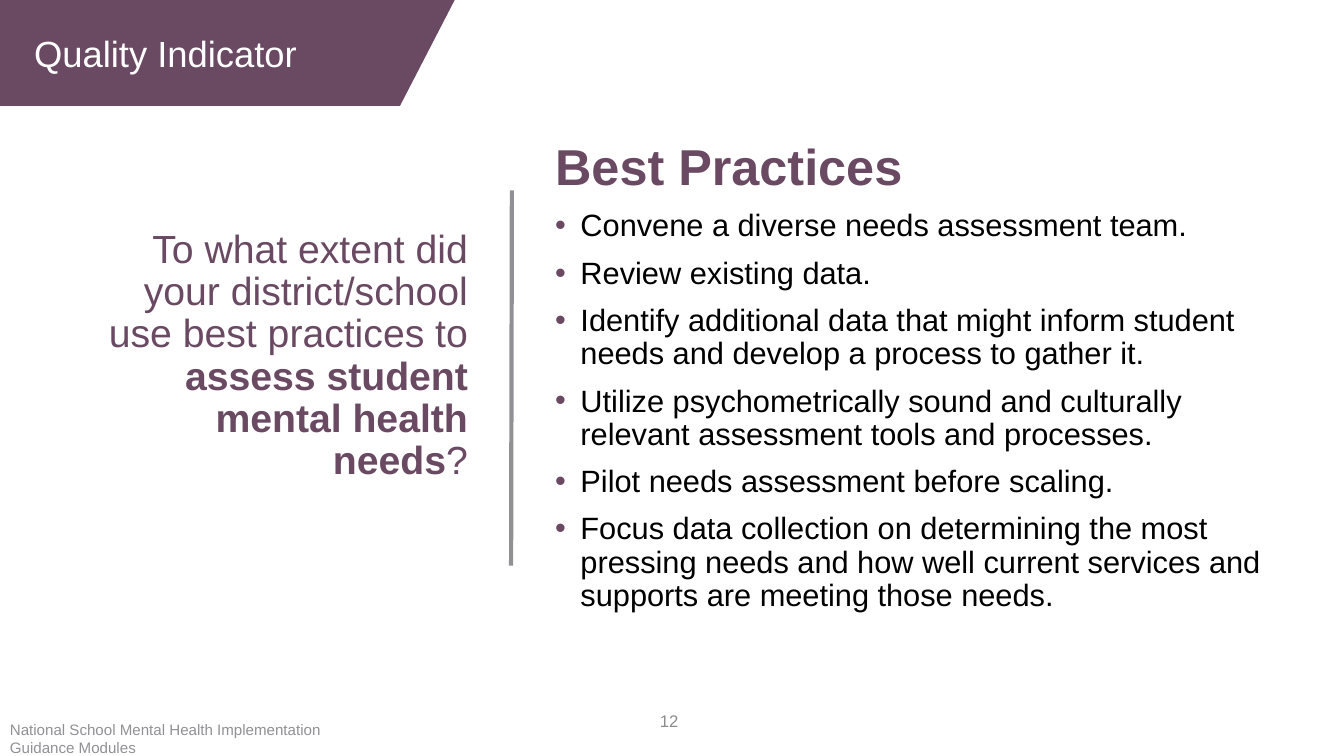
"""Build the Quality Indicator slide on needs assessment."""
from dataclasses import dataclass

from lxml import etree
from pptx import Presentation
from pptx import util as u
from pptx.dml.color import RGBColor
from pptx.enum import shapes, text
from pptx.oxml import ns

PLUM = RGBColor(0x6A, 0x4A, 0x62)
WHITE = RGBColor(0xFF, 0xFF, 0xFF)
BLACK = RGBColor(0x00, 0x00, 0x00)
GREY = RGBColor(0x91, 0x91, 0x95)
PALE = RGBColor(0x8C, 0x8C, 0x8C)
TOP, MID = text.MSO_ANCHOR.TOP, text.MSO_ANCHOR.MIDDLE
LEFT, RIGHT = text.PP_ALIGN.LEFT, text.PP_ALIGN.RIGHT


@dataclass
class Run:
    words: str
    size: float
    color: RGBColor
    bold: bool = False


@dataclass
class Para:
    runs: list[Run]
    align: int = LEFT
    line: float = 1.0
    space: float = 0
    dot: bool = False


@dataclass
class Block:
    box: tuple[float, float, float, float]
    paras: list[Para]
    anchor: int = TOP
    foot: float = 0.13
    fill: RGBColor | None = None


QUERY = Para([
    Run("To what extent did your district/school use best practices to ", 28, PLUM),
    Run("assess student mental health needs", 28, PLUM, True),
    Run("?", 28, PLUM),
], RIGHT, 0.9)
STEPS = [
    "Convene a diverse needs assessment team.",
    "Review existing data.",
    "Identify additional data that might inform student needs and develop a process to gather it.",
    "Utilize psychometrically sound and culturally relevant assessment tools and processes.",
    "Pilot needs assessment before scaling.",
    "Focus data collection on determining the most pressing needs and how well "
    "current services and supports are meeting those needs.",
]
HEAD = Para([Run("Best Practices", 36, PLUM, True)], line=0.9)
LIST = [Para([Run(step, 22, BLACK)], line=0.9, space=10, dot=True) for step in STEPS]
BLOCKS = [
    Block((9.73, 17.65, 7.62, 1.02), [Para([Run("12", 12, PALE)], RIGHT)], MID),
    Block((0.61, 0.66, 8.08, 1.37), [Para([Run("Quality Indicator", 26, WHITE)])], fill=PLUM),
    Block((2.34, 2.67, 9.7, 13.69), [QUERY], MID, foot=1.2),
    Block((13.74, 2.67, 19.13, 13.69), [HEAD, *LIST], MID),
    Block((0, 18.03, 9.68, 1.02), [
        Para([Run("National School Mental Health Implementation Guidance Modules", 10.8, GREY)])]),
]
BANNER = [(0, 0), (11.46, 0), (10.08, 2.67), (0, 2.67)]
RULE = (12.9, 4.8, 12.88, 14.25)


def apply(obj, form: dict) -> None:
    for name, value in form.items():
        setattr(obj, name, value)


def paint(shape, color: RGBColor) -> None:
    shape.shadow.inherit = False
    shape.fill.solid()
    shape.fill.fore_color.rgb = color
    shape.line.fill.background()


def add_dot(para) -> None:
    props = para._p.get_or_add_pPr()
    indent = u.Cm(0.64)
    props.set("marL", str(indent))
    props.set("indent", str(-indent))
    tint = etree.SubElement(props, ns.qn("a:buClr"))
    etree.SubElement(tint, ns.qn("a:srgbClr"), val=str(PLUM))
    etree.SubElement(props, ns.qn("a:buFont"), typeface="Arial")
    etree.SubElement(props, ns.qn("a:buChar"), char="•")


def write(para, data: Para) -> None:
    if data.dot:
        add_dot(para)
    apply(para, {"alignment": data.align, "line_spacing": data.line,
                 "space_before": u.Pt(data.space)})
    for item in data.runs:
        run = para.add_run()
        run.text = item.words
        apply(run.font, {"name": "Arial", "size": u.Pt(item.size), "bold": item.bold})
        run.font.color.rgb = item.color


def add_block(slide, block: Block) -> None:
    area = [u.Cm(n) for n in block.box]
    if block.fill is None:
        shape = slide.shapes.add_textbox(*area)
    else:
        shape = slide.shapes.add_shape(shapes.MSO_SHAPE.RECTANGLE, *area)
        paint(shape, block.fill)
    frame = shape.text_frame
    apply(frame, {"word_wrap": True, "vertical_anchor": block.anchor,
                  "margin_bottom": u.Cm(block.foot)})
    for i, data in enumerate(block.paras):
        write(frame.add_paragraph() if i else frame.paragraphs[0], data)


def add_banner(slide) -> None:
    start, *rest = [(u.Cm(x), u.Cm(y)) for x, y in BANNER]
    form = slide.shapes.build_freeform(*start)
    form.add_line_segments(rest, close=True)
    paint(form.convert_to_shape(), PLUM)


def add_rule(slide) -> None:
    rule = slide.shapes.add_connector(
        shapes.MSO_CONNECTOR.STRAIGHT, *[u.Cm(n) for n in RULE])
    rule.line.color.rgb = GREY
    rule.line.width = u.Pt(3)
    etree.SubElement(rule._element.spPr, ns.qn("a:effectLst"))


def main() -> None:
    deck = Presentation()
    apply(deck, {"slide_width": u.Cm(33.87), "slide_height": u.Cm(19.05)})
    slide = deck.slides.add_slide(deck.slide_layouts[6])
    add_banner(slide)
    for block in BLOCKS:
        add_block(slide, block)
    add_rule(slide)
    deck.save("out.pptx")


if __name__ == "__main__":
    main()
